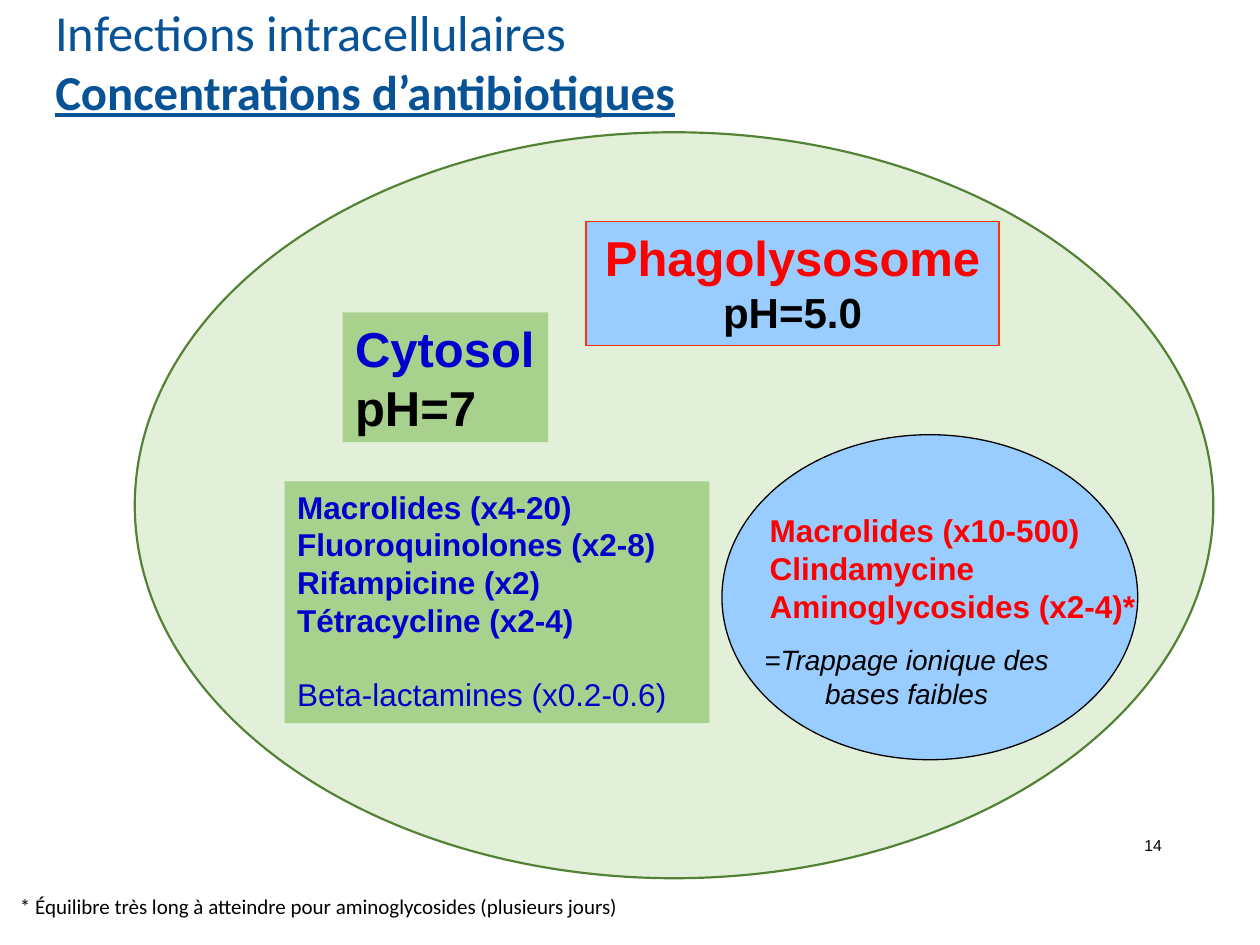
from pptx import Presentation
from pptx.dml.color import RGBColor
from pptx.enum import shapes, text
from pptx.util import Inches, Pt

BLUE, RED, BLACK, NAVY = "0000CC", "FF0000", "000000", "085296"
SKY, GREEN = "99CCFF", "A9D18E"


def rgb(value):
    """Turn a hex string into a colour."""
    return RGBColor.from_string(value)


def add_shape(s, kind, box, fill, line=None, width=0.75):
    """Add a filled preset shape, outlined if a line colour is given."""
    sp = s.shapes.add_shape(kind, *map(Inches, box))
    sp.shadow.inherit = False
    sp.fill.solid()
    sp.fill.fore_color.rgb = rgb(fill)
    if line:
        sp.line.color.rgb = rgb(line)
        sp.line.width = Pt(width)
    else:
        sp.line.fill.background()
    return sp


def add_ellipse(s, box, fill, line, width=0.75):
    """Add a cell compartment."""
    return add_shape(s, shapes.MSO_SHAPE.OVAL, box, fill, line, width)


def add_panel(s, box, fill, line=None, wrap=True):
    """Add a coloured rectangle and return its text frame."""
    sp = add_shape(s, shapes.MSO_SHAPE.RECTANGLE, box, fill, line)
    return set_frame(sp.text_frame, wrap)


def add_text(s, box, wrap=True, anchor=text.MSO_ANCHOR.TOP):
    """Add a text box and return its text frame."""
    return set_frame(s.shapes.add_textbox(*map(Inches, box)).text_frame, wrap, anchor)


def set_frame(tf, wrap=True, anchor=text.MSO_ANCHOR.TOP):
    """Set the wrapping and anchor of a text frame."""
    tf.word_wrap = wrap
    tf.vertical_anchor = anchor
    return tf


def add_run(p, words, size=18, color=BLACK, font="Arial", bold=False,
            italic=False, underline=False):
    """Append a formatted run to a paragraph."""
    r = p.add_run()
    r.text = words
    f = r.font
    f.name, f.size, f.color.rgb = font, Pt(size), rgb(color)
    f.bold, f.italic, f.underline = bold, italic, underline


def write(tf, words, align=text.PP_ALIGN.LEFT, before=0, **fmt):
    """Write one paragraph, using the empty first one when it is free."""
    p = tf.paragraphs[0]
    if p.runs:
        p = tf.add_paragraph()
    p.alignment = align
    p.space_before = Pt(before)
    add_run(p, words, **fmt)
    return p


def write_list(tf, items, **fmt):
    """Write one paragraph per item in a shared format."""
    for item in items:
        write(tf, item, **fmt)


def main():
    """Build and save the slide."""
    prs = Presentation()
    prs.slide_width, prs.slide_height = Inches(10), Inches(7.5)
    s = prs.slides.add_slide(prs.slide_layouts[6])
    center, right = text.PP_ALIGN.CENTER, text.PP_ALIGN.RIGHT
    middle = text.MSO_ANCHOR.MIDDLE

    add_ellipse(s, (1.07, 1.05, 8.56, 5.92), "E2F0D9", "548235", 1.25)

    title = add_text(s, (0.34, 0.15, 8.68, 0.66), anchor=middle)
    p = write(title, "Infections intracellulaires", size=28.8, color=NAVY, font="Calibri")
    p.add_line_break()
    add_run(p, "Concentrations d’antibiotiques", size=27.9, color=NAVY,
            font="Calibri", bold=True, underline=True)

    number = add_text(s, (6.63, 6.51, 2.69, 0.4), anchor=middle)
    write(number, "14", align=right, size=9)

    add_ellipse(s, (5.73, 3.45, 3.3, 2.58), SKY, BLACK)

    phagolysosome = add_panel(s, (4.65, 1.76, 3.28, 0.98), SKY, "FF3300")
    write(phagolysosome, "Phagolysosome", align=center, size=28, color=RED, bold=True)
    write(phagolysosome, "pH=5.0", align=center, size=24, bold=True)

    trapped = add_text(s, (6.01, 4.01, 3.13, 1.01), wrap=False)
    write_list(trapped, ["Macrolides (x10-500)", "Clindamycine",
                         "Aminoglycosides (x2-4)*"], color=RED, bold=True)

    cytosol = add_panel(s, (2.72, 2.48, 1.63, 1.03), GREEN, wrap=False)
    write(cytosol, "Cytosol", size=28, color=BLUE, bold=True)
    write(cytosol, "pH=7", size=28, bold=True)

    drugs = add_panel(s, (2.26, 3.82, 3.37, 1.92), GREEN)
    write_list(drugs, ["Macrolides (x4-20)", "Fluoroquinolones (x2-8)",
                       "Rifampicine (x2)", "Tétracycline (x2-4)"],
               color=BLUE, bold=True)
    write(drugs, "Beta-lactamines (x0.2-0.6)", before=21, color=BLUE)

    trapping = add_text(s, (5.77, 5.05, 2.85, 0.64))
    write(trapping, "=Trappage ionique des bases faibles", align=center,
          size=16, italic=True)

    footnote = add_text(s, (0.06, 7.04, 5, 0.3), wrap=False)
    write(footnote, "* Équilibre très long à atteindre pour aminoglycosides (plusieurs jours)",
          size=12, font="Calibri")

    prs.save("out.pptx")


if __name__ == "__main__":
    main()
